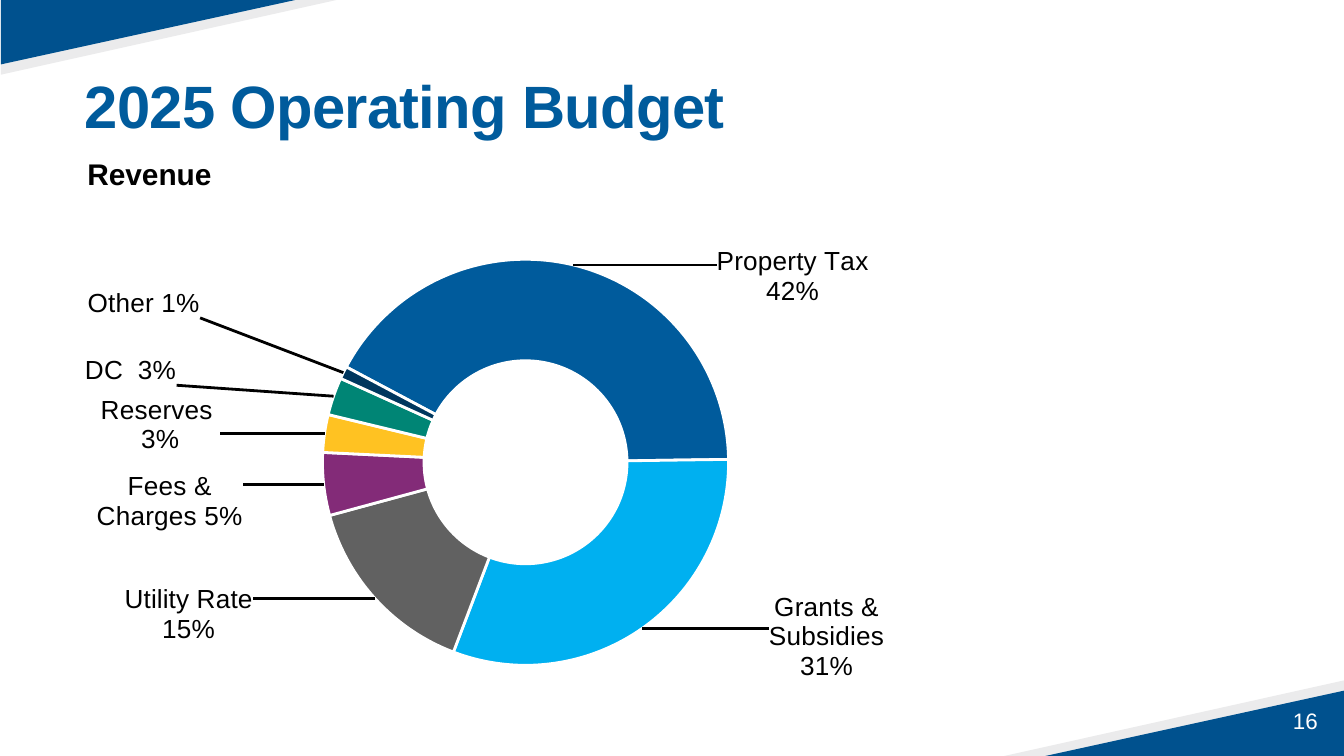
"""Build the 2025 operating budget revenue slide."""
from copy import deepcopy
from dataclasses import dataclass
from itertools import accumulate
from math import cos, radians, sin

from pptx import Presentation
from pptx.chart.data import CategoryChartData
from pptx.dml.color import RGBColor
from pptx.enum.chart import XL_CHART_TYPE as ChartType
from pptx.enum.text import MSO_ANCHOR as Anchor, PP_ALIGN as Align
from pptx.oxml import parse_xml
from pptx.oxml.ns import nsdecls, qn
from pptx.util import Pt

FONT = "Arial"
COLOURS = {
    "pale": "EBEBEC", "corner": "00518E", "title": "005B9C",
    "white": "FFFFFF", "black": "000000", "property": "005B9C",
    "grants": "00B0F0", "utility": "616161", "fees": "832B78",
    "reserves": "FFC222", "development": "008575", "other": "00375E",
}
CHART_LEFT, CHART_TOP, CHART_WIDTH, CHART_HEIGHT = 17.3, 114.5, 486.7, 262.8
RING_X, RING_Y, RING_MIDDLE = 282, 247, 81
START_ANGLE, HOLE = 298, 46


@dataclass
class Triangle:
    """A right-angled triangle set in a slide corner."""
    x: float
    y: float
    width: float
    height: float
    colour: str


@dataclass
class Label:
    """A single line of text and the box around it."""
    text: str
    left: float
    top: float
    width: float
    height: float
    size: float
    colour: str
    bold: bool = False
    anchor: Anchor = Anchor.TOP
    align: Align = Align.LEFT
    insets: tuple = (7.2, 3.6, 7.2, 3.6)
    spacing: float = 1.0
    tracking: int = 0


@dataclass
class Revenue:
    """A revenue source with the centre and width of its label."""
    name: str
    share: float
    colour: str
    x: float
    y: float
    width: float
    lines: int


TRIANGLES = [
    Triangle(x, y, sign * width, sign * height, colour)
    for x, y, sign in ((0.5, -0.5, 1), (720, 405, -1))
    for width, height, colour in ((182, 40.5, "pale"), (160, 35, "corner"))
]
LABELS = [
    Label("16", 545, 375, 168, 21.6, 12, "white", anchor=Anchor.MIDDLE, align=Align.RIGHT),
    Label("2025 Operating Budget", 38.2, 37.4, 620.6, 49, 32, "title", True,
          spacing=0.9, tracking=-40),
    Label("Revenue", 46.8, 64.8, 373.7, 43.9, 16, "black", True,
          anchor=Anchor.MIDDLE, insets=(0, 18, 7.2, 5.8)),
]
REVENUES = [
    Revenue("Property Tax", 0.42, "property", 425, 148, 86, 2),
    Revenue("Grants & Subsidies", 0.31, "grants", 443, 340, 66, 3),
    Revenue("Utility Rate", 0.15, "utility", 102, 328, 74, 2),
    Revenue("Fees & Charges", 0.05, "fees", 92, 268, 82, 2),
    Revenue("Reserves ", 0.03, "reserves", 87, 227, 68, 2),
    Revenue("DC ", 0.03, "development", 71, 198, 66, 1),
    Revenue("Other", 0.01, "other", 78, 162, 72, 1),
]


def rgb(name: str) -> RGBColor:
    """Return a named colour."""
    return RGBColor.from_string(COLOURS[name])


def draw_triangle(page, item: Triangle) -> None:
    """Draw one corner triangle."""
    builder = page.shapes.build_freeform(Pt(item.x), Pt(item.y))
    builder.add_line_segments([
        (Pt(item.x + item.width), Pt(item.y)),
        (Pt(item.x), Pt(item.y + item.height)),
    ], close=True)
    shape = builder.convert_to_shape()
    shape.shadow.inherit = False
    shape.fill.solid()
    shape.fill.fore_color.rgb = rgb(item.colour)
    shape.line.fill.background()


def draw_label(page, item: Label) -> None:
    """Draw one text box."""
    box = page.shapes.add_textbox(Pt(item.left), Pt(item.top), Pt(item.width), Pt(item.height))
    frame = box.text_frame
    frame.word_wrap = True
    frame.vertical_anchor = item.anchor
    (frame.margin_left, frame.margin_top,
     frame.margin_right, frame.margin_bottom) = map(Pt, item.insets)
    para = frame.paragraphs[0]
    para.alignment, para.line_spacing = item.align, item.spacing
    span = para.add_run()
    span.text = item.text
    font = para.font
    font.name, font.size, font.bold = FONT, Pt(item.size), item.bold
    font.color.rgb = rgb(item.colour)
    if item.tracking:
        span.font._element.set("spc", str(item.tracking))


def place_label(labels, index: int, item: Revenue, angle: float) -> None:
    """Move one slice label from the ring to its own place."""
    shift_x = (item.x - RING_X - RING_MIDDLE * sin(radians(angle))) / CHART_WIDTH
    shift_y = (item.y - RING_Y + RING_MIDDLE * cos(radians(angle))) / CHART_HEIGHT
    width = item.width / CHART_WIDTH
    height = (item.lines * 16 + 4) / CHART_HEIGHT
    label = parse_xml(
        f'<c:dLbl {nsdecls("c")}><c:idx val="{index}"/><c:layout><c:manualLayout>'
        f'<c:x val="{shift_x:.4f}"/><c:y val="{shift_y:.4f}"/></c:manualLayout></c:layout>'
        '<c:showLegendKey val="0"/><c:showVal val="1"/><c:showCatName val="1"/>'
        '<c:showSerName val="0"/><c:showPercent val="0"/><c:showBubbleSize val="0"/>'
        '<c:separator> </c:separator><c:extLst>'
        '<c:ext uri="{CE6537A1-D6FC-4f65-9D91-7224C49458BB}" '
        'xmlns:c15="http://schemas.microsoft.com/office/drawing/2012/chart">'
        f'<c15:layout><c:manualLayout><c:w val="{width:.4f}"/><c:h val="{height:.4f}"/>'
        '</c:manualLayout></c15:layout></c:ext></c:extLst></c:dLbl>')
    for offset, tag in enumerate(("c:numFmt", "c:txPr")):
        label.insert(2 + offset, deepcopy(labels.find(qn(tag))))
    labels.insert(index, label)


def draw_chart(page, revenues: list[Revenue]) -> None:
    """Draw the revenue doughnut with its labels and leader lines."""
    data = CategoryChartData(number_format="0%")
    data.categories = [item.name for item in revenues]
    data.add_series("Series 1", [item.share for item in revenues])
    chart = page.shapes.add_chart(
        ChartType.DOUGHNUT, Pt(CHART_LEFT), Pt(CHART_TOP),
        Pt(CHART_WIDTH), Pt(CHART_HEIGHT), data).chart
    chart.has_legend = chart.has_title = False
    chart.font.name, chart.font.size = FONT, Pt(10)
    chart.font.color.rgb = rgb("black")
    plot = chart.plots[0]
    plot.vary_by_categories = True
    ring = plot._element
    ring.find(qn("c:firstSliceAng")).set("val", str(START_ANGLE))
    ring.find(qn("c:holeSize")).set("val", str(HOLE))
    area = ring.getparent()
    for layout in area.findall(qn("c:layout")):
        area.remove(layout)
    area.insert(0, parse_xml(
        f'<c:layout {nsdecls("c")}><c:manualLayout><c:layoutTarget val="inner"/>'
        '<c:xMode val="edge"/><c:yMode val="edge"/><c:x val="0.276"/><c:y val="0.093"/>'
        '<c:w val="0.534"/><c:h val="0.828"/></c:manualLayout></c:layout>'))
    series = plot.series[0]
    labels = series.data_labels
    labels.show_value = labels.show_category_name = True
    labels.number_format, labels.number_format_is_linked = "0%", False
    labels.font.name, labels.font.size = FONT, Pt(14)
    labels.font.color.rgb = rgb("black")
    ends = accumulate(item.share for item in revenues)
    for index, (item, end) in enumerate(zip(revenues, ends)):
        look = series.points[index].format
        look.fill.solid()
        look.fill.fore_color.rgb = rgb(item.colour)
        look.line.color.rgb, look.line.width = rgb("white"), Pt(1.5)
        angle = START_ANGLE + 360 * (end - item.share / 2)
        place_label(labels._element, index, item, angle)
    labels._element.append(parse_xml(
        f'<c:leaderLines {nsdecls("c", "a")}><c:spPr><a:ln w="{Pt(1.5)}"><a:solidFill>'
        f'<a:srgbClr val="{COLOURS["black"]}"/></a:solidFill></a:ln></c:spPr></c:leaderLines>'))


def main() -> None:
    """Build and save the deck."""
    deck = Presentation()
    deck.slide_width, deck.slide_height = Pt(720), Pt(405)
    page = deck.slides.add_slide(deck.slide_layouts[6])
    for triangle in TRIANGLES:
        draw_triangle(page, triangle)
    for label in LABELS:
        draw_label(page, label)
    draw_chart(page, REVENUES)
    deck.save("out.pptx")


if __name__ == "__main__":
    main()
